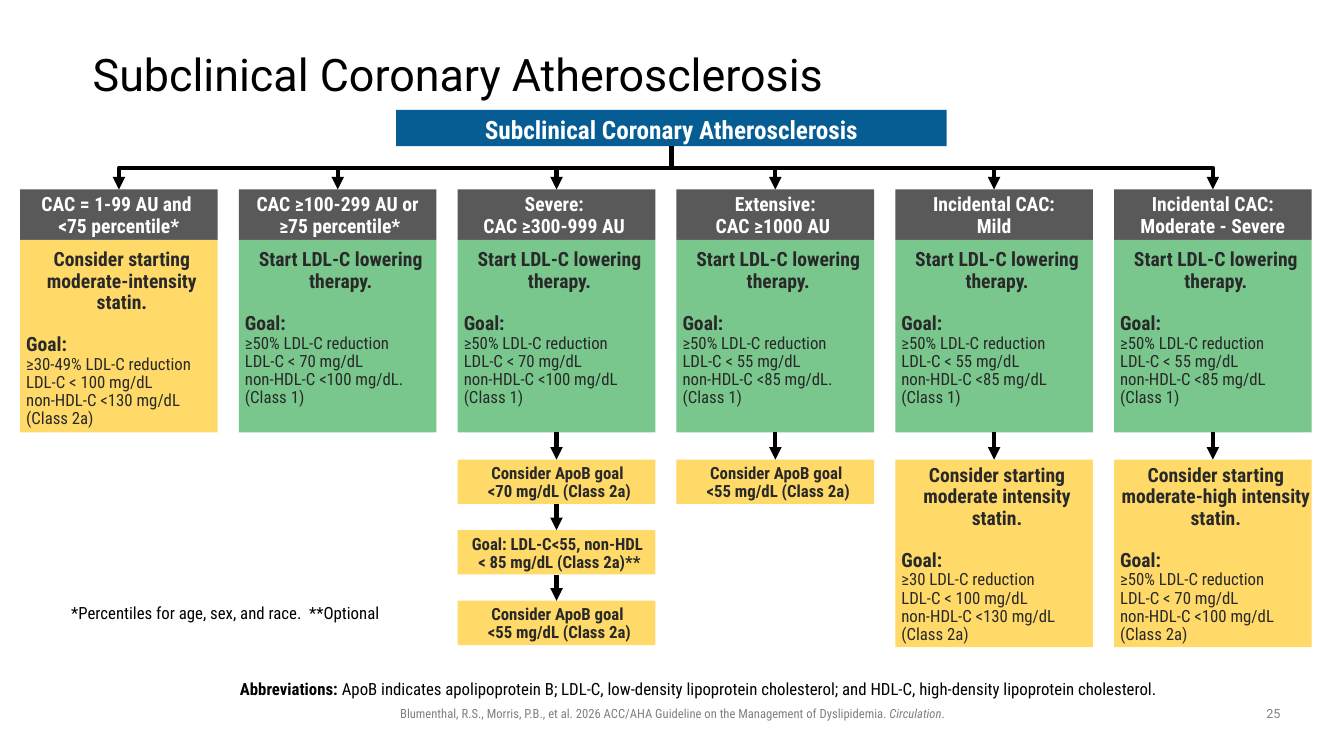
from lxml.etree import SubElement
from pptx import Presentation
from pptx.dml.color import RGBColor
from pptx.enum.shapes import MSO_CONNECTOR, MSO_SHAPE
from pptx.enum.text import MSO_ANCHOR, PP_ALIGN
from pptx.oxml.ns import qn
from pptx.util import Pt

PX = 9144
CONDENSED = "Roboto Condensed"
BLUE, GRAY, GREEN, YELLOW = "065D93", "595959", "79C78D", "FFDA68"
BLACK, WHITE, INK, MUTED = "000000", "FFFFFF", "292929", "808080"
COL_LEFT, COL_STEP, COL_W = 20, 217, 196
HEAD_TOP, HEAD_H, BODY_H = 188, 50, 191
NEXT_TOP, NEXT_STEP, NOTE_H, STATIN_H = 456, 70, 44, 186

START = "Start LDL-C lowering therapy."
COLUMNS = [
    (["CAC = 1-99 AU and \n<75 percentile*"], YELLOW,
     ["Consider starting moderate-intensity statin.", "≥30-49% LDL-C reduction",
      "LDL-C < 100 mg/dL", "non-HDL-C <130 mg/dL", "(Class 2a)"], [], []),
    (["CAC ≥100-299 AU or\n ≥75 percentile*"], GREEN,
     [START, "≥50% LDL-C reduction", "LDL-C < 70 mg/dL",
      "non-HDL-C <100 mg/dL.", "(Class 1)"], [], []),
    (["Severe: ", "CAC ≥300-999 AU "], GREEN,
     [START, "≥50% LDL-C reduction", "LDL-C < 70 mg/dL",
      "non-HDL-C <100 mg/dL", "(Class 1)"],
     ["Consider ApoB goal \n<70 mg/dL (Class 2a)",
      "Goal: LDL-C<55, non-HDL \n< 85 mg/dL (Class 2a)**",
      "Consider ApoB goal \n<55 mg/dL (Class 2a)"], []),
    (["Extensive:", "CAC ≥1000 AU "], GREEN,
     [START, "≥50% LDL-C reduction", "LDL-C < 55 mg/dL",
      "non-HDL-C <85 mg/dL.", "(Class 1)"],
     ["Consider ApoB goal \n<55 mg/dL (Class 2a)"], []),
    (["Incidental CAC:", "Mild"], GREEN,
     [START, "≥50% LDL-C reduction", "LDL-C < 55 mg/dL",
      "non-HDL-C <85 mg/dL", "(Class 1)"], [],
     ["Consider starting moderate intensity statin.", "≥30 LDL-C reduction",
      "LDL-C < 100 mg/dL", "non-HDL-C <130 mg/dL", "(Class 2a)"]),
    (["Incidental CAC:", "Moderate - Severe"], GREEN,
     [START, "≥50% LDL-C reduction", "LDL-C < 55 mg/dL",
      "non-HDL-C <85 mg/dL", "(Class 1)"], [],
     ["Consider starting moderate-high intensity statin.", "≥50% LDL-C reduction",
      "LDL-C < 70 mg/dL", "non-HDL-C <100 mg/dL", "(Class 2a)"]),
]


def rgb(color):
    """Turn a hex string into a colour."""
    return RGBColor.from_string(color)


def write(sp, text, size=14, color=INK, bold=False, italic=False, font=CONDENSED,
          align=PP_ALIGN.CENTER, spacing=0.9, before=0, indent=0, join=False):
    """Add text as a new paragraph, or join it to the last one."""
    tf = sp.text_frame
    p = tf.paragraphs[-1]
    if p.runs and not join:
        p = tf.add_paragraph()
    if not join:
        p.alignment, p.line_spacing, p.space_before = align, spacing, Pt(before)
        p._p.get_or_add_pPr().set("marL", str(indent * PX))
    for i, line in enumerate(text.split("\n")):
        if i:
            p.add_line_break()
        r = p.add_run()
        r.text = line
        r.font.size, r.font.name = Pt(size), font
        r.font.bold, r.font.italic = bold, italic
        r.font.color.rgb = rgb(color)


def set_frame(sp, anchor, insets):
    """Set wrapping, anchor and left, top, right, bottom insets."""
    tf = sp.text_frame
    tf.word_wrap, tf.vertical_anchor = True, anchor
    tf.margin_left, tf.margin_top, tf.margin_right, tf.margin_bottom = (
        v * PX for v in insets)


def add_label(s, x, y, w, h, anchor=MSO_ANCHOR.TOP, insets=(10, 5, 10, 5)):
    """Add an empty text box."""
    sp = s.shapes.add_textbox(x * PX, y * PX, w * PX, h * PX)
    set_frame(sp, anchor, insets)
    return sp


def add_box(s, x, y, w, h, fill, anchor=MSO_ANCHOR.MIDDLE, top=3):
    """Add a filled rectangle without outline."""
    sp = s.shapes.add_shape(MSO_SHAPE.RECTANGLE, x * PX, y * PX, w * PX, h * PX)
    sp.shadow.inherit = False
    sp.fill.solid()
    sp.fill.fore_color.rgb = rgb(fill)
    sp.line.fill.background()
    set_frame(sp, anchor, (0, top, 0, 0))
    return sp


def write_goal(sp, lines):
    """Write a treatment step followed by its goal list."""
    step, *goals = lines
    write(sp, step, bold=True, indent=6)
    write(sp, "Goal:", bold=True, align=PP_ALIGN.LEFT, before=15, indent=6)
    for goal in goals:
        write(sp, goal, size=12, align=PP_ALIGN.LEFT, indent=6)


def style_arrow(cxn):
    """Give a connector a thick black line with an arrowhead."""
    cxn.line.color.rgb = rgb(BLACK)
    cxn.line.width = Pt(3)
    SubElement(cxn.line._get_or_add_ln(), qn("a:tailEnd"), type="triangle")
    SubElement(cxn._element.spPr, qn("a:effectLst"))


def add_arrow(s, upper, lower):
    """Join two stacked boxes with a straight arrow."""
    cxn = s.shapes.add_connector(MSO_CONNECTOR.STRAIGHT, 0, 0, 0, 0)
    cxn.begin_connect(upper, 2)
    cxn.end_connect(lower, 0)
    style_arrow(cxn)


def add_branch(s, root, head):
    """Draw a bent arrow from the root's bottom to the head's top."""
    x1, y1 = root.left + root.width // 2, root.top + root.height
    x2, y2 = head.left + head.width // 2, head.top
    mid_x, mid_y = (x1 + x2) // 2, (y1 + y2) // 2
    half_w, half_h = (y2 - y1) // 2, abs(x2 - x1) // 2
    side = 1 if x2 < x1 else -1
    cxn = s.shapes.add_connector(
        MSO_CONNECTOR.ELBOW, mid_x - side * half_w, mid_y - half_h,
        mid_x + side * half_w, mid_y + half_h)
    cxn._element.spPr.xfrm.set("rot", str((90 if side == 1 else 270) * 60000))
    style_arrow(cxn)


def add_column(s, i, root, titles, fill, body_lines, notes, statin):
    """Build one branch: head, body and the steps below it."""
    x = COL_LEFT + i * COL_STEP
    head = add_box(s, x, HEAD_TOP, COL_W, HEAD_H, GRAY)
    for title in titles:
        write(head, title, color=WHITE, bold=True)
    body = add_box(s, x, HEAD_TOP + HEAD_H, COL_W, BODY_H, fill, MSO_ANCHOR.TOP, 10)
    write_goal(body, body_lines)
    add_branch(s, root, head)
    last = body
    for n, note in enumerate(notes):
        box = add_box(s, x, NEXT_TOP + n * NEXT_STEP, COL_W, NOTE_H, YELLOW)
        write(box, note, size=12, bold=True, indent=6)
        add_arrow(s, last, box)
        last = box
    if statin:
        box = add_box(s, x, NEXT_TOP, COL_W, STATIN_H, YELLOW)
        write_goal(box, statin)
        add_arrow(s, body, box)


def main():
    """Build and save the slide."""
    prs = Presentation()
    prs.slide_width, prs.slide_height = 1333 * PX, 750 * PX
    s = prs.slides.add_slide(prs.slide_layouts[6])

    title = add_label(s, 92, 40, 1150, 72, MSO_ANCHOR.MIDDLE, (0, 0, 0, 0))
    write(title, "Subclinical Coronary Atherosclerosis", size=32, color=BLACK,
          font="Roboto", align=PP_ALIGN.LEFT)
    root = add_box(s, 393, 109, 546, 36, BLUE)
    write(root, "Subclinical Coronary Atherosclerosis", size=18, color=WHITE,
          bold=True, spacing=1.0)
    for i, column in enumerate(COLUMNS):
        add_column(s, i, root, *column)

    note = add_label(s, 63, 597, 331, 26, MSO_ANCHOR.BOTTOM, (0, 5, 10, 5))
    write(note, "*Percentiles for age, sex, and race.  **Optional", size=12, color=BLACK)
    terms = add_label(s, 155, 653, 1086, 46, MSO_ANCHOR.BOTTOM, (0, 5, 10, 5))
    write(terms, "Abbreviations:", size=12, color=BLACK, bold=True)
    write(terms, " ApoB indicates apolipoprotein B; LDL-C, low-density lipoprotein "
          "cholesterol; and HDL-C, high-density lipoprotein cholesterol.",
          size=12, color=BLACK, join=True)
    cite = add_label(s, 236, 695, 862, 25)
    write(cite, "Blumenthal, R.S., Morris, P.B., et al. 2026 ACC/AHA Guideline on the "
          "Management of Dyslipidemia. ", size=9, color=MUTED, spacing=1.0)
    write(cite, "Circulation", size=9, color=MUTED, italic=True, join=True)
    write(cite, ".", size=9, color=MUTED, join=True)
    number = add_label(s, 1242, 695, 42, 26)
    write(number, "25", size=9, color=MUTED, font="Roboto", spacing=1.0)
    prs.save("out.pptx")


if __name__ == "__main__":
    main()
